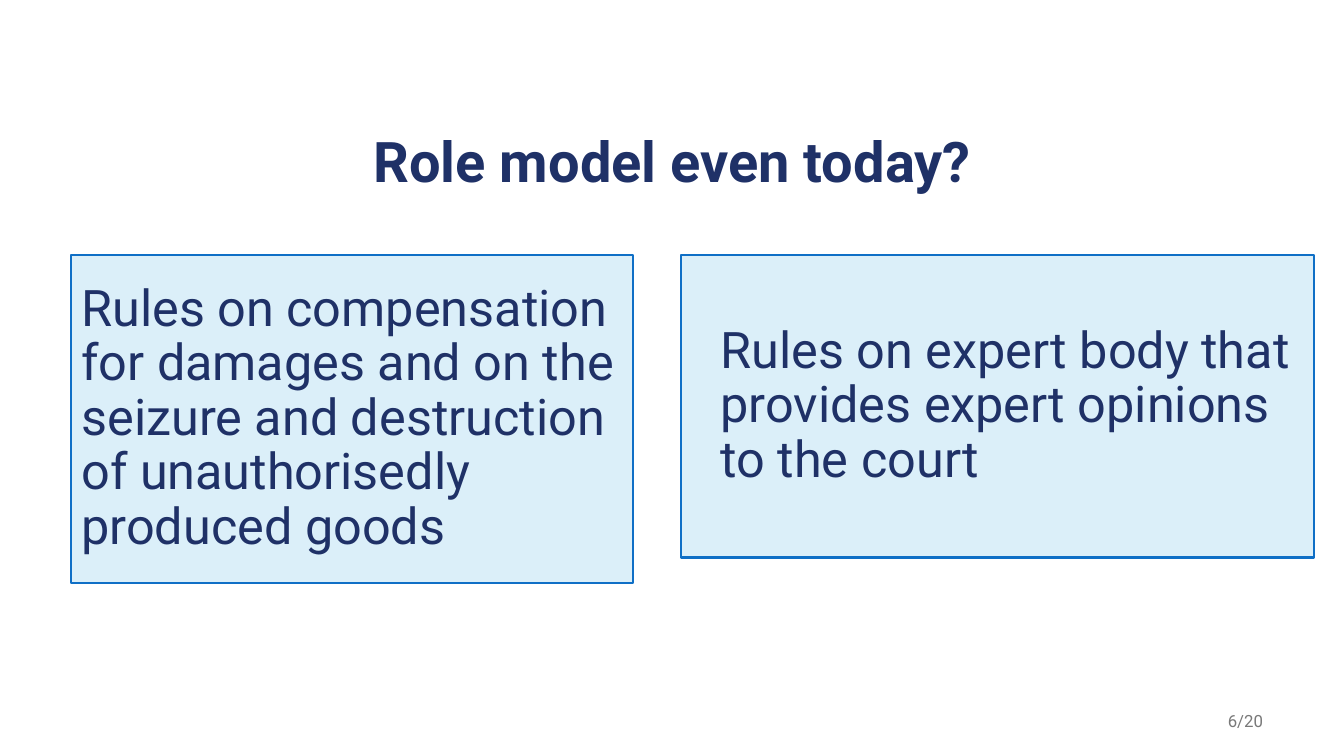
from dataclasses import dataclass
from typing import Optional

from pptx import Presentation
from pptx.dml.color import RGBColor
from pptx.enum.shapes import MSO_SHAPE as Shape
from pptx.enum.text import MSO_ANCHOR as Anchor, PP_ALIGN as Align
from pptx.util import Cm, Pt

NAVY = RGBColor(0x1F, 0x31, 0x67)
GREY = RGBColor(0x79, 0x79, 0x79)
PALE = RGBColor(0xDB, 0xEF, 0xF9)
BLUE = RGBColor(0x0F, 0x6F, 0xC6)


@dataclass
class Box:
    text: str
    left: float
    top: float
    width: float
    height: float
    size: int
    align: Align = Align.LEFT
    color: RGBColor = NAVY
    bold: bool = False
    fill: Optional[RGBColor] = None
    spacing: float = 0.9
    indent: float = 0


def draw(slide, box: Box) -> None:
    place = [Cm(n) for n in (box.left, box.top, box.width, box.height)]
    # Filled panel or plain text box
    if box.fill is not None:
        shape = slide.shapes.add_shape(Shape.RECTANGLE, *place)
        shape.shadow.inherit = False
        shape.fill.solid()
        shape.fill.fore_color.rgb = box.fill
        shape.line.color.rgb = BLUE
        shape.line.width = Pt(1.5)
    else:
        shape = slide.shapes.add_textbox(*place)

    # Text and its format
    frame = shape.text_frame
    frame.word_wrap = True
    frame.vertical_anchor = Anchor.MIDDLE
    para = frame.paragraphs[0]
    para.alignment = box.align
    para.line_spacing = box.spacing
    if box.indent:
        props = para._p.get_or_add_pPr()
        props.set("marL", str(Cm(box.indent)))
        props.set("indent", "0")
    run = para.add_run()
    run.text = box.text
    style = {"name": "Roboto", "size": Pt(box.size), "bold": box.bold}
    for key, value in style.items():
        setattr(run.font, key, value)
    run.font.color.rgb = box.color


# Title, page number and the two panels
BOXES = [
    Box("Role model even today?", 1.8, 2.82, 30.28, 2.64, 40,
        align=Align.CENTER, bold=True),
    Box("6/20", 24.46, 17.65, 7.62, 1.02, 12,
        align=Align.RIGHT, color=GREY, spacing=1.0),
    Box("Rules on compensation for damages and on the seizure and "
        "destruction of unauthorisedly produced goods",
        1.8, 6.43, 14.15, 8.26, 36, fill=PALE),
    Box("Rules on expert body that provides expert opinions to the court",
        17.17, 6.43, 15.95, 7.62, 36, fill=PALE, indent=0.74),
]


def main() -> None:
    deck = Presentation()
    deck.slide_width, deck.slide_height = Cm(33.87), Cm(19.05)
    slide = deck.slides.add_slide(deck.slide_layouts[6])
    for box in BOXES:
        draw(slide, box)
    deck.save("out.pptx")


if __name__ == "__main__":
    main()
